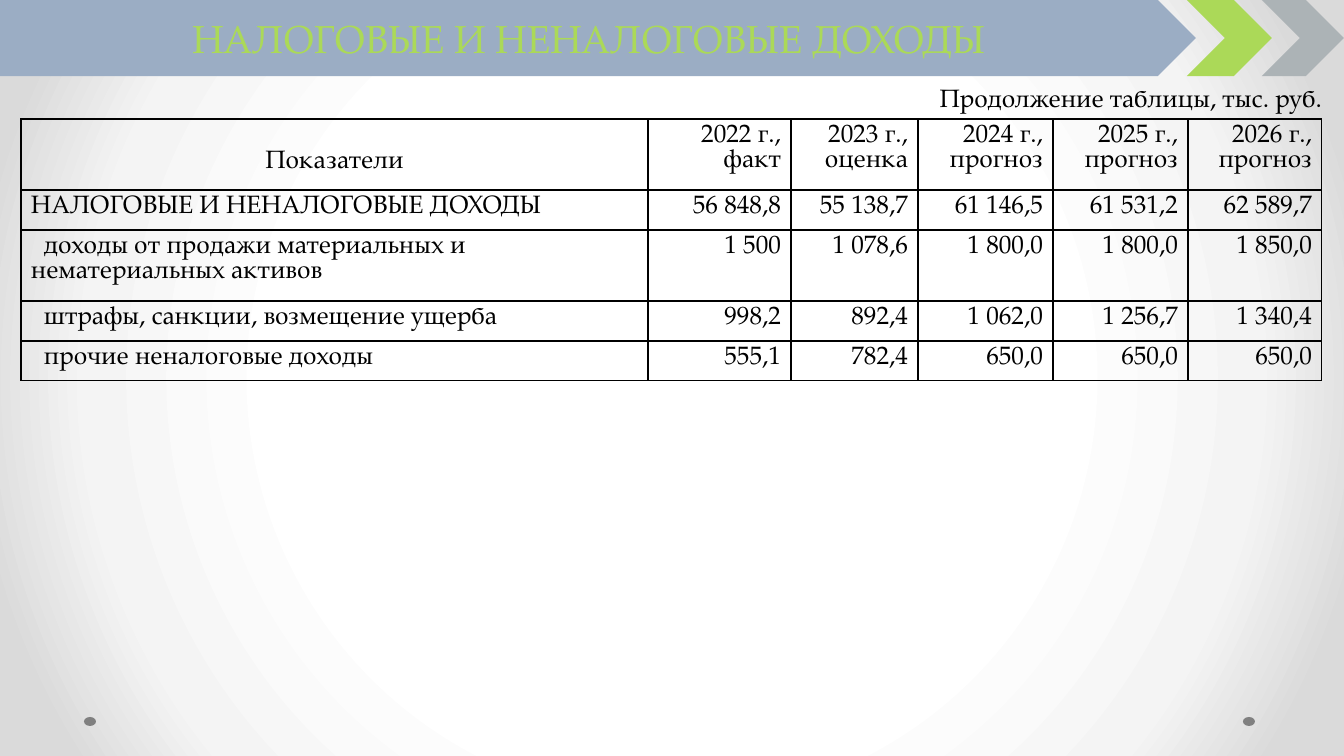
import dataclasses

import pptx
import pptx.dml.color
import pptx.enum.shapes
import pptx.enum.text
import pptx.oxml
import pptx.oxml.ns
import pptx.util

PX = 12192000 // 1344
FONT = "TeX Gyre Pagella"
BLACK, GREEN = "000000", "ABD958"
TITLE = "НАЛОГОВЫЕ И НЕНАЛОГОВЫЕ ДОХОДЫ"
BANNER_HEIGHT = 76
SHAPE = pptx.enum.shapes.MSO_SHAPE
ALIGN = pptx.enum.text.PP_ALIGN
ANCHOR = pptx.enum.text.MSO_ANCHOR

BACKGROUND_STOPS = [(50, "FFFFFF"), (76, "F4F4F4"), (92, "DADADA")]
COLUMN_WIDTHS = [627, 143, 127, 135, 135, 134]
HEADER = ["Показатели", "2022 г., факт", "2023 г., оценка",
          "2024 г., прогноз", "2025 г., прогноз", "2026 г., прогноз"]


@dataclasses.dataclass
class Decoration:
    kind: SHAPE
    left: int
    top: int
    width: int
    height: int
    color: str


@dataclasses.dataclass
class Row:
    height: int
    texts: list[str]
    indent: int = 0


DOTS = [Decoration(SHAPE.OVAL, left, 717, 12, 9, "808080") for left in (84, 1243)]
BANNER = Decoration(SHAPE.PENTAGON, 0, 0, 1196, BANNER_HEIGHT, "9BADC4")
CHEVRONS = [
    Decoration(SHAPE.CHEVRON, 1187, 0, 85, BANNER_HEIGHT, GREEN),
    Decoration(SHAPE.CHEVRON, 1262, 0, 82, BANNER_HEIGHT, "ACB3B6"),
]
ROWS = [
    Row(71, HEADER),
    Row(40, [TITLE, "56 848,8", "55 138,7", "61 146,5", "61 531,2", "62 589,7"]),
    Row(71, ["доходы от продажи материальных и нематериальных активов",
             "1 500", "1 078,6", "1 800,0", "1 800,0", "1 850,0"], 13),
    Row(40, ["штрафы, санкции, возмещение ущерба",
             "998,2", "892,4", "1 062,0", "1 256,7", "1 340,4"], 13),
    Row(40, ["прочие неналоговые доходы",
             "555,1", "782,4", "650,0", "650,0", "650,0"], 13),
]


def px(n: int) -> pptx.util.Emu:
    return pptx.util.Emu(n * PX)


def rgb(color: str) -> pptx.dml.color.RGBColor:
    return pptx.dml.color.RGBColor.from_string(color)


def write(tf, text: str, size: int, color: str, align: ALIGN):
    p = tf.paragraphs[0]
    p.text = text
    p.alignment = align
    p.font.name = FONT
    p.font.size = pptx.util.Pt(size)
    p.font.color.rgb = rgb(color)
    return p


def set_background(s) -> None:
    """Fill the slide with a gradient that darkens from its centre outwards."""
    stops = "".join(
        f'<a:gs pos="{percent * 1000}"><a:srgbClr val="{color}"/></a:gs>'
        for percent, color in BACKGROUND_STOPS)
    bg = pptx.oxml.parse_xml(
        f'<p:bg {pptx.oxml.ns.nsdecls("p", "a")}><p:bgPr><a:gradFill>'
        f'<a:gsLst>{stops}</a:gsLst><a:path path="circle">'
        '<a:fillToRect l="50000" t="50000" r="50000" b="50000"/></a:path>'
        '</a:gradFill><a:effectLst/></p:bgPr></p:bg>')
    s.element.cSld.insert(0, bg)


def add_decoration(s, item: Decoration):
    sp = s.shapes.add_shape(
        item.kind, px(item.left), px(item.top), px(item.width), px(item.height))
    sp.shadow.inherit = False
    sp.fill.solid()
    sp.fill.fore_color.rgb = rgb(item.color)
    sp.line.fill.background()
    return sp


def add_title(s) -> None:
    banner = add_decoration(s, BANNER)
    title = s.shapes.title
    banner.element.addnext(title.element)
    title.left, title.top = px(0), px(0)
    title.width, title.height = px(1177), px(BANNER_HEIGHT)
    tf = title.text_frame
    tf.auto_size = pptx.enum.text.MSO_AUTO_SIZE.NONE
    tf.vertical_anchor = ANCHOR.MIDDLE
    write(tf, TITLE, 28, GREEN, ALIGN.CENTER)


def add_caption(s) -> None:
    tf = s.shapes.add_textbox(px(918), px(77), px(414), px(40)).text_frame
    tf.word_wrap = True
    write(tf, "Продолжение таблицы, тыс. руб.", 18, BLACK, ALIGN.RIGHT)


def set_borders(cell) -> None:
    tcPr = cell._tc.get_or_add_tcPr()
    for side in "LRTB":
        tcPr.append(pptx.oxml.parse_xml(
            f'<a:ln{side} {pptx.oxml.ns.nsdecls("a")} w="12700"><a:solidFill>'
            f'<a:srgbClr val="{BLACK}"/></a:solidFill></a:ln{side}>'))


def add_income_table(s) -> None:
    table = s.shapes.add_table(
        len(ROWS), len(COLUMN_WIDTHS), px(21), px(119),
        px(sum(COLUMN_WIDTHS)), px(sum(row.height for row in ROWS))).table
    table.first_row = table.horz_banding = False
    for column, width in zip(table.columns, COLUMN_WIDTHS):
        column.width = px(width)
    for i, row in enumerate(ROWS):
        table.rows[i].height = px(row.height)
        for j, text in enumerate(row.texts):
            cell = table.cell(i, j)
            set_borders(cell)
            cell.fill.background()
            cell.margin_left = cell.margin_right = px(10)
            cell.margin_top = cell.margin_bottom = px(5)
            align = ALIGN.LEFT if j == 0 else ALIGN.RIGHT
            p = write(cell.text_frame, text, 18, BLACK, align)
            p.line_spacing = pptx.util.Pt(18)
            if j == 0 and row.indent:
                p._p.get_or_add_pPr().set("indent", str(px(row.indent)))
    heading = table.cell(0, 0)
    heading.margin_top = px(31)
    heading.text_frame.paragraphs[0].alignment = ALIGN.CENTER


def main() -> None:
    prs = pptx.Presentation()
    prs.slide_width, prs.slide_height = px(1344), px(756)
    s = prs.slides.add_slide(prs.slide_layouts[5])
    set_background(s)
    for dot in DOTS:
        add_decoration(s, dot)
    add_income_table(s)
    add_caption(s)
    add_title(s)
    for chevron in CHEVRONS:
        add_decoration(s, chevron)
    prs.save("out.pptx")


if __name__ == "__main__":
    main()
